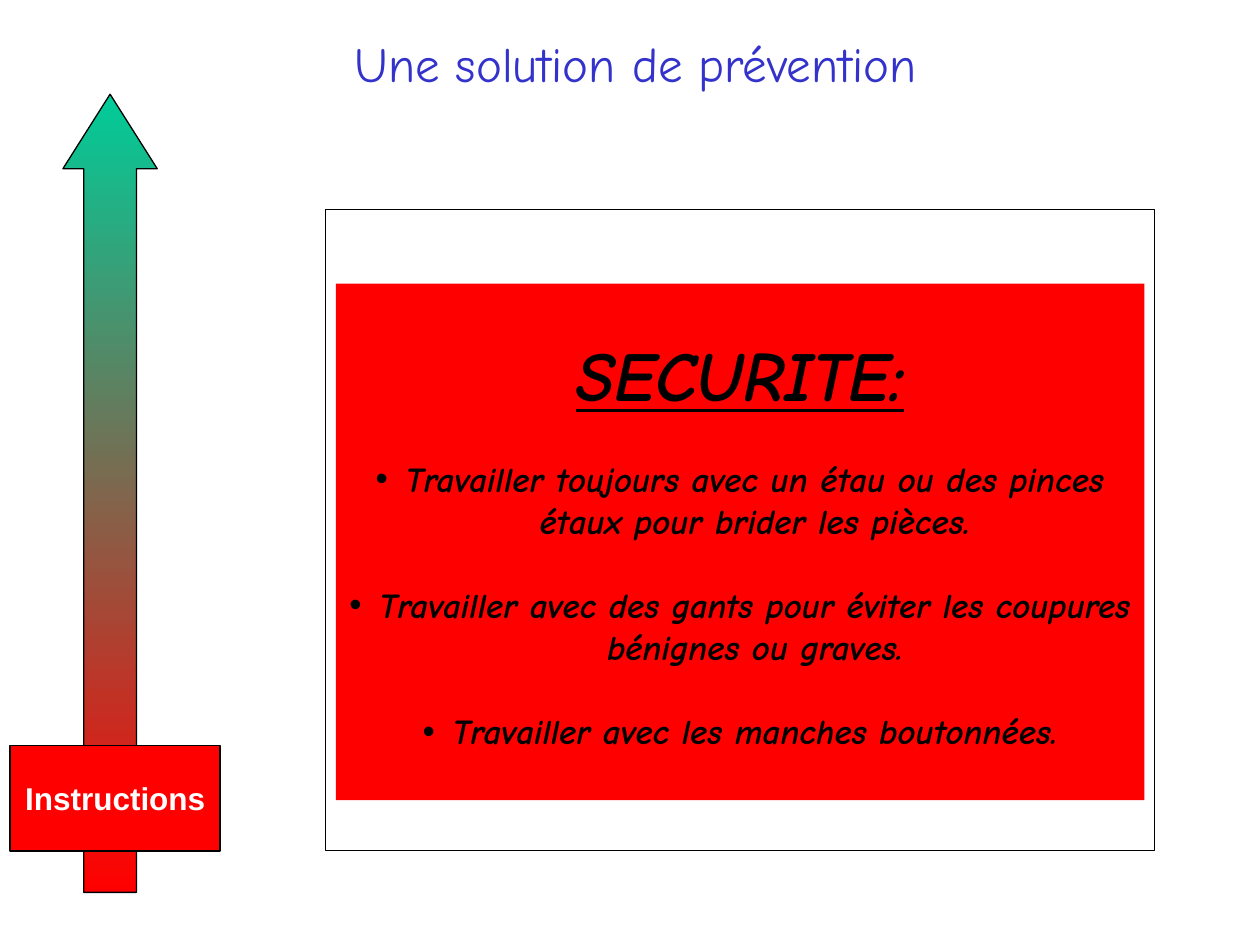
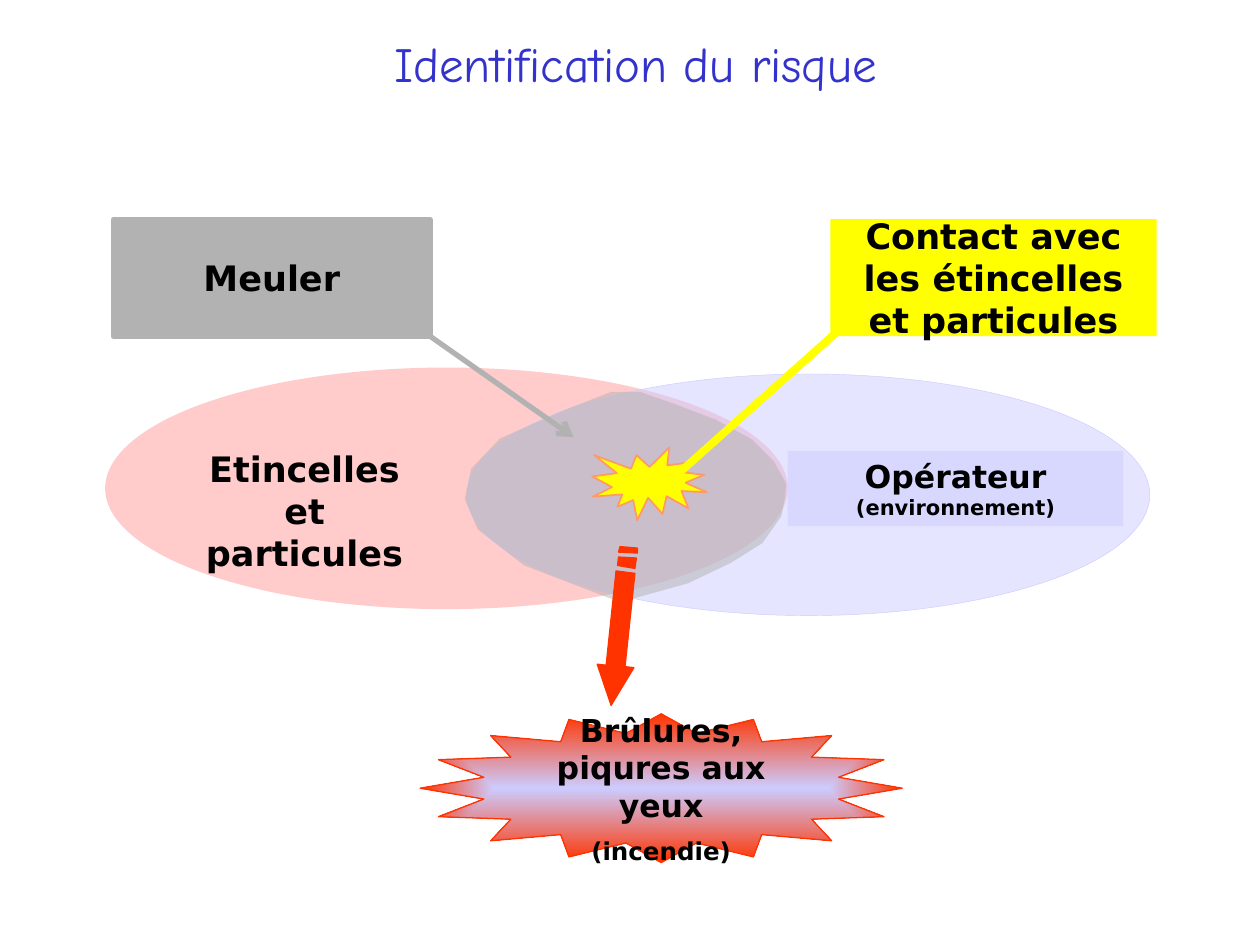
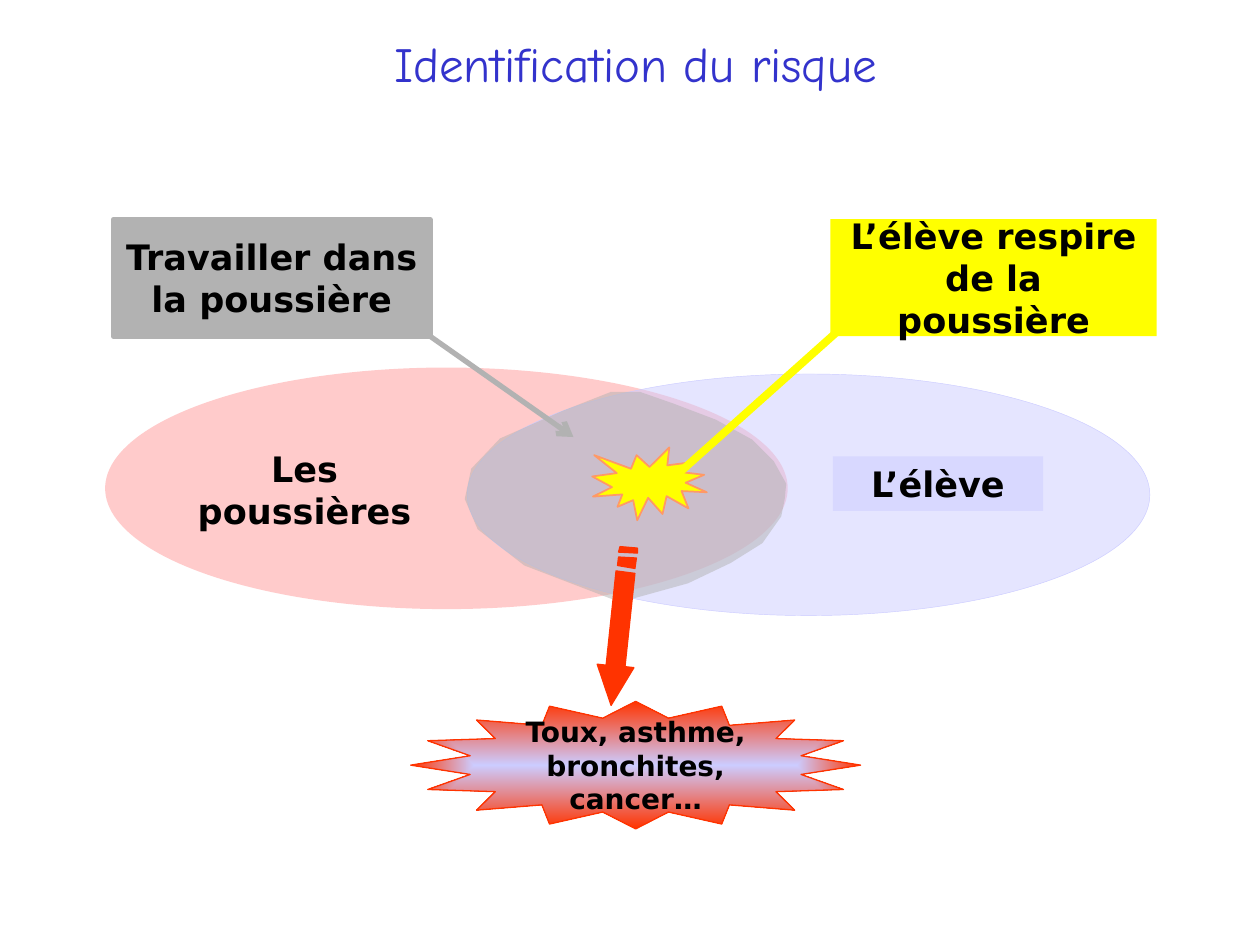
from lxml import etree
from pptx import Presentation
from pptx.dml.color import RGBColor
from pptx.enum.shapes import MSO_CONNECTOR, MSO_SHAPE
from pptx.enum.text import MSO_ANCHOR, MSO_AUTO_SIZE, PP_ALIGN
from pptx.oxml.ns import qn
from pptx.util import Cm, Pt

RECTANGLE, ELLIPSE = MSO_SHAPE.RECTANGLE, MSO_SHAPE.OVAL
UP_ARROW, STAR, BURST = MSO_SHAPE.UP_ARROW, MSO_SHAPE.STAR_16_POINT, MSO_SHAPE.EXPLOSION1
STRAIGHT = MSO_CONNECTOR.STRAIGHT
TOP, MIDDLE = MSO_ANCHOR.TOP, MSO_ANCHOR.MIDDLE
CENTER = PP_ALIGN.CENTER
NO_AUTOFIT = MSO_AUTO_SIZE.NONE

COLORS = {
    "title": "3333CC", "black": "000000", "white": "FFFFFF", "red": "FF0000",
    "green": "00CC99", "pink": "FF9999", "lilac": "CCCCFF", "gray": "B2B2B2",
    "yellow": "FFFF00", "flame": "FF3300", "orange": "FF9966",
}
HAND_FONT, LABEL_FONT, PLAIN_FONT = "Comic Neue", "DejaVu Sans", "Arial"

# Content: every paragraph is a list of (text, size) runs
PREVENTION_TITLE = "Une solution de prévention"
LEVEL = "Instructions"
SAFETY_HEADING = "SECURITE:"
SAFETY_RULES = [
    "Travailler toujours avec un étau ou des pinces étaux pour brider les pièces.",
    "Travailler avec des gants pour éviter les coupures bénignes ou graves.",
    "Travailler avec les manches boutonnées.",
]
RISK_TITLE = "Identification du risque"
RISKS = [
    {
        "situation": [[("Meuler", 20)]],
        "event": [[("Contact avec les étincelles et particules", 20)]],
        "danger": [[("Etincelles et particules", 20)]],
        "person": [[("Opérateur ", 18), ("(environnement)", 12)]],
        "person_box": (15.88, 9.09, 6.77, 1.52),
        "damage": [[("Brûlures, piqures aux yeux", 18)], [("(incendie)", 14)]],
        "damage_box": (8.47, 14.39, 9.72, 3),
    },
    {
        "situation": [[("Travailler dans la poussière", 20)]],
        "event": [[("L’élève respire de la poussière", 20)]],
        "danger": [[("Les poussières", 20)]],
        "person": [[("L’élève", 20)]],
        "person_box": (16.79, 9.2, 4.24, 1.1),
        "damage": [[("Toux, asthme, bronchites, cancer…", 16)]],
        "damage_box": (8.28, 14.14, 9.07, 2.57),
    },
]

# Outlines, in hundredths of a centimetre
OVERLAP = [[
    (1290, 790), (1356, 813), (1443, 846), (1516, 886), (1560, 930), (1585, 975),
    (1582, 1006), (1575, 1041), (1537, 1095), (1473, 1135), (1387, 1176),
    (1250, 1214), (1057, 1140), (963, 1067), (937, 1006), (950, 945),
    (1008, 884), (1135, 828), (1232, 790),
]]
STRIPED_ARROW = [
    [(1278, 1346), (1260, 1344), (1280, 1156), (1242, 1151), (1222, 1341),
     (1204, 1339), (1232, 1422)],
    [(1283, 1125), (1247, 1123), (1245, 1140), (1280, 1146)],
    [(1285, 1105), (1250, 1102), (1247, 1113), (1285, 1115)],
]


def rgb(name):
    return RGBColor.from_string(COLORS[name])


def place(shape, box):
    shape.left, shape.top, shape.width, shape.height = (Cm(length) for length in box)


def write_text(shape, paragraphs, font=LABEL_FONT, color="black", bold=True,
               italic=False, anchor=MIDDLE, inset=None):
    frame = shape.text_frame
    frame.word_wrap, frame.auto_size, frame.vertical_anchor = True, NO_AUTOFIT, anchor
    if inset is not None:
        frame.margin_left = frame.margin_right = Cm(inset)
        frame.margin_top = frame.margin_bottom = Cm(inset)
    for index, runs in enumerate(paragraphs):
        paragraph = frame.add_paragraph() if index else frame.paragraphs[0]
        paragraph.alignment = CENTER
        paragraph.space_before = Pt(runs[0][1] / 2 if index else 0)
        for text, size in runs:
            run = paragraph.add_run()
            run.text = text
            run.font.name, run.font.size = font, Pt(size)
            run.font.bold, run.font.italic = bold, italic
            run.font.color.rgb = rgb(color)


def paint(shape, fill=None, opacity=None, line=None, width=0.75):
    shape.shadow.inherit = False
    if fill:
        shape.fill.solid()
        shape.fill.fore_color.rgb = rgb(fill)
    else:
        shape.fill.background()
    if opacity:
        color = shape.fill._xPr.find(".//" + qn("a:srgbClr"))
        etree.SubElement(color, qn("a:alpha"), val=str(opacity * 1000))
    if line:
        shape.line.color.rgb = rgb(line)
        shape.line.width = Pt(width)
    else:
        shape.line.fill.background()


def add_shape(slide, kind, box, **look):
    shape = slide.shapes.add_shape(kind, *(Cm(length) for length in box))
    paint(shape, **look)
    return shape


def add_outline(slide, contours, **look):
    builder = slide.shapes.build_freeform(*contours[0][0], scale=Cm(0.01))
    for index, contour in enumerate(contours):
        if index:
            builder.move_to(*contour[0])
        builder.add_line_segments(contour[1:], close=True)
    paint(builder.convert_to_shape(), **look)


def add_line(slide, ends, color, width, arrow=False):
    line = slide.shapes.add_connector(STRAIGHT, *(Cm(length) for length in ends))
    line.line.color.rgb = rgb(color)
    line.line.width = Pt(width)
    if arrow:
        etree.SubElement(line.line._get_or_add_ln(), qn("a:tailEnd"), type="arrow")
    etree.SubElement(line._element.spPr, qn("a:effectLst"))


def fill_gradient(shape, first, last, from_center=False):
    shape.fill.gradient()
    for stop, name in zip(shape.fill.gradient_stops, (first, last)):
        stop.color.rgb = rgb(name)
    if not from_center:
        shape.fill.gradient_angle = 270
        return
    gradient = shape._element.spPr.find(qn("a:gradFill"))
    gradient.remove(gradient.find(qn("a:lin")))
    shade = etree.SubElement(gradient, qn("a:path"), path="shape")
    etree.SubElement(shade, qn("a:fillToRect"),
                     {side: "50000" for side in "ltrb"})


def set_bullet(paragraph, indent=0.0):
    properties = paragraph._p.get_or_add_pPr()
    properties.set("marL", str(Cm(indent)))
    properties.set("indent", str(-Cm(indent)))
    if indent:
        etree.SubElement(properties, qn("a:buFont"), typeface="Arial")
        etree.SubElement(properties, qn("a:buChar"), char="•")
    else:
        etree.SubElement(properties, qn("a:buNone"))


def add_slide(presentation, layout, title):
    slide = presentation.slides.add_slide(presentation.slide_layouts[layout])
    place(slide.shapes.title, (1.48, 0.42, 22.66, 1.69))
    write_text(slide.shapes.title, [[(title, 28)]], font=HAND_FONT,
               color="title", bold=False)
    return slide


def add_prevention_slide(presentation):
    slide = add_slide(presentation, 1, PREVENTION_TITLE)

    # Safety panel inside its frame
    add_shape(slide, RECTANGLE, (6.56, 4.23, 16.72, 12.91), line="black")
    panel = slide.placeholders[1]
    place(panel, (6.77, 5.72, 16.3, 10.41))
    panel.fill.solid()
    panel.fill.fore_color.rgb = rgb("red")
    rules = [[(rule, 20)] for rule in SAFETY_RULES]
    write_text(panel, [[(SAFETY_HEADING, 40)]] + rules, font=HAND_FONT,
               italic=True, anchor=TOP)
    panel.text_frame.margin_top = Cm(0.97)
    heading, *items = panel.text_frame.paragraphs
    heading.runs[0].font.underline = True
    set_bullet(heading)
    for item in items:
        item.space_before = Pt(24)
        set_bullet(item, 0.6)

    # Scale of prevention levels
    arrow = add_shape(slide, UP_ARROW, (1.27, 1.9, 1.9, 16.09), line="black")
    arrow.adjustments[0], arrow.adjustments[1] = 0.56, 0.79
    fill_gradient(arrow, "green", "red")
    level = add_shape(slide, RECTANGLE, (0.21, 15.03, 4.23, 2.12),
                      fill="red", line="black", width=1)
    write_text(level, [[(LEVEL, 18)]], font=PLAIN_FONT, color="white")


def add_risk_slide(presentation, risk):
    slide = add_slide(presentation, 5, RISK_TITLE)

    # Danger and person, with their overlap
    add_shape(slide, ELLIPSE, (2.12, 7.41, 13.76, 4.87), fill="pink", opacity=50)
    danger = slide.shapes.add_textbox(Cm(3.45), Cm(8.89), Cm(5.38), Cm(1.96))
    write_text(danger, risk["danger"], anchor=TOP)
    add_shape(slide, ELLIPSE, (9.42, 7.54, 13.76, 4.87), fill="lilac", opacity=50,
              line="lilac", width=0.25)
    person = add_shape(slide, RECTANGLE, risk["person_box"], fill="lilac", opacity=50)
    write_text(person, risk["person"], anchor=TOP)
    add_outline(slide, OVERLAP, fill="gray", opacity=50)

    # Damage that follows
    add_line(slide, (8.46, 6.63, 11.56, 8.81), "gray", 3, arrow=True)
    add_outline(slide, STRIPED_ARROW, fill="flame", line="flame")
    damage = add_shape(slide, STAR, risk["damage_box"], line="flame")
    fill_gradient(damage, "lilac", "flame", from_center=True)
    write_text(damage, risk["damage"], inset=0)

    # Event and situation
    add_shape(slide, BURST, (11.94, 9.02, 2.31, 1.47), fill="yellow",
              line="orange", width=1)
    event = add_shape(slide, RECTANGLE, (16.74, 4.42, 6.58, 2.36), fill="yellow")
    write_text(event, risk["event"])
    add_line(slide, (13.67, 9.55, 16.94, 6.63), "yellow", 4.5)
    situation = add_shape(slide, RECTANGLE, (2.29, 4.42, 6.38, 2.36), fill="gray",
                          line="gray", width=3)
    write_text(situation, risk["situation"])


def main():
    presentation = Presentation()
    presentation.slide_width, presentation.slide_height = Cm(25.4), Cm(19.05)
    add_prevention_slide(presentation)
    for risk in RISKS:
        add_risk_slide(presentation, risk)
    presentation.save("out.pptx")


if __name__ == "__main__":
    main()
